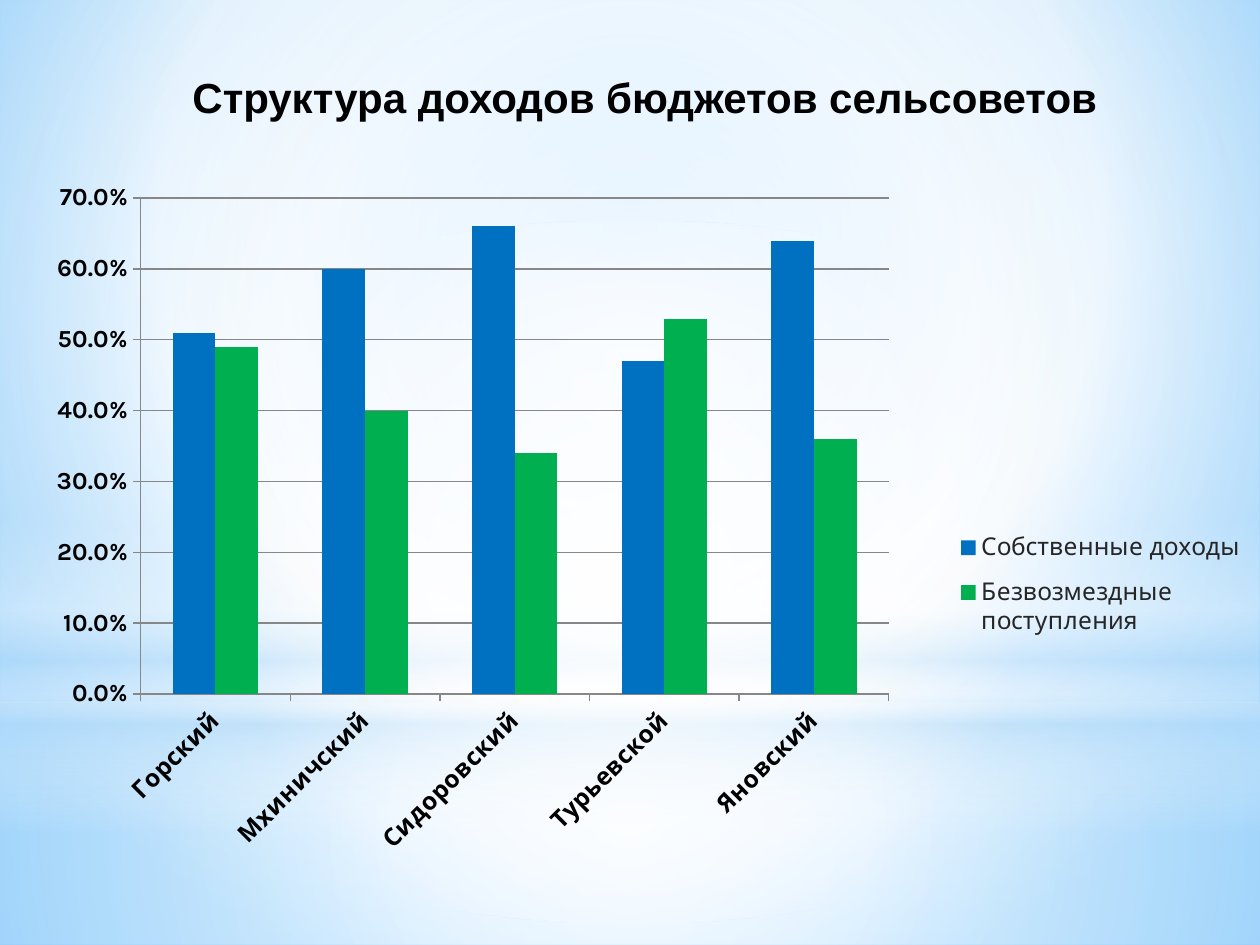
from lxml import etree
from pptx import Presentation
from pptx.chart.data import CategoryChartData
from pptx.dml.color import RGBColor
from pptx.enum.chart import XL_CHART_TYPE, XL_LEGEND_POSITION, XL_TICK_MARK
from pptx.enum.shapes import MSO_SHAPE
from pptx.enum.text import MSO_AUTO_SIZE, PP_ALIGN
from pptx.oxml import parse_xml
from pptx.oxml.ns import qn
from pptx.util import Cm, Pt

COLUMN = XL_CHART_TYPE.COLUMN_CLUSTERED
RIGHT = XL_LEGEND_POSITION.RIGHT
OUT, NONE = XL_TICK_MARK.OUTSIDE, XL_TICK_MARK.NONE
RECT, OVAL = MSO_SHAPE.RECTANGLE, MSO_SHAPE.OVAL
CENTER = PP_ALIGN.CENTER
GROW = MSO_AUTO_SIZE.SHAPE_TO_FIT_TEXT

COLORS = {
    "white": "FFFFFF", "pale": "B4DCFA", "sky": "9ED5FF", "blue": "5BB9FF",
    "black": "000000", "gray": "262626", "line": "878787",
    "own": "0070C0", "grant": "00B050",
}
MID = (50, 50, 50, 50)

# Backdrop layers: shape, box in cm, stops (place, colour, opacity), focus
LAYERS = [
    (RECT, (0, 14.17, 25.4, 4.88),
     [(0, "white", 91), (37, "white", 76), (100, "pale", 79)], MID),
    (RECT, (0, 0, 25.4, 14.17),
     [(0, "white", 89), (48, "white", 62), (100, "pale", 79)], MID),
    (RECT, (0, 10.46, 25.4, 6.35),
     [(0, "white", 0), (29, "white", 30), (45, "pale", 40),
      (55, "white", 26), (65, "pale", 60), (100, "white", 0)], None),
    (OVAL, (0, 4.45, 25.4, 14.17),
     [(0, "white", 100), (56, "white", 0)], MID),
]

CATS = ["Горский", "Мхиничский", "Сидоровский", "Турьевской", "Яновский"]
SERIES = [
    ("Собственные доходы", "own", (0.51, 0.6, 0.66, 0.47, 0.64)),
    ("Безвозмездные поступления", "grant", (0.49, 0.4, 0.34, 0.53, 0.36)),
]


def rgb(name):
    return RGBColor.from_string(COLORS[name])


def set_grad(root, stops, focus):
    """Swap the solid fill under root for a gradient; no focus means downward."""
    ns = "http://schemas.openxmlformats.org/drawingml/2006/main"
    marks = "".join(
        f'<a:gs pos="{pos * 1000}"><a:srgbClr val="{COLORS[name]}">'
        f'<a:alpha val="{alpha * 1000}"/></a:srgbClr></a:gs>'
        for pos, name, alpha in stops)
    if focus:
        sides = " ".join(f'{s}="{v * 1000}"' for s, v in zip("ltrb", focus))
        way = f'<a:path path="circle"><a:fillToRect {sides}/></a:path>'
    else:
        way = '<a:lin ang="5400000" scaled="0"/>'
    solid = root.find(".//" + qn("a:solidFill"))
    solid.getparent().replace(solid, parse_xml(
        f'<a:gradFill xmlns:a="{ns}" rotWithShape="1">'
        f'<a:gsLst>{marks}</a:gsLst>{way}</a:gradFill>'))


def add_layer(slide, kind, box, stops, focus):
    shape = slide.shapes.add_shape(kind, *map(Cm, box))
    shape.shadow.inherit = False
    shape.fill.solid()
    set_grad(shape.element, stops, focus)
    shape.line.fill.background()


def set_font(font, size, color, bold=False, face="Karla"):
    font.name, font.size, font.bold = face, Pt(size), bold
    font.color.rgb = rgb(color)


def add_title(slide, text):
    box = slide.shapes.add_textbox(Cm(1.5), Cm(1.32), Cm(23), Cm(1.27))
    frame = box.text_frame
    frame.word_wrap = True
    frame.auto_size = GROW
    para = frame.paragraphs[0]
    para.alignment = CENTER
    run = para.add_run()
    run.text = text
    set_font(run.font, 24, "black", True, "Arial")


def set_place(root, index, box, inner=False):
    """Give a chart part a fixed place, as shares of the chart."""
    old = root.find(qn("c:layout"))
    if old is not None:
        root.remove(old)
    layout = etree.Element(qn("c:layout"))
    manual = etree.SubElement(layout, qn("c:manualLayout"))
    pairs = [("layoutTarget", "inner")] if inner else []
    pairs += [("xMode", "edge"), ("yMode", "edge")]
    pairs += zip("xywh", box)
    for tag, val in pairs:
        etree.SubElement(manual, qn("c:" + tag)).set("val", str(val))
    root.insert(index, layout)


def style_axis(axis):
    axis.major_tick_mark, axis.minor_tick_mark = OUT, NONE
    set_font(axis.tick_labels.font, 14, "black", True)
    axis.format.line.color.rgb = rgb("line")
    axis.format.line.width = Pt(0.75)


def add_bars(slide):
    data = CategoryChartData(number_format="0.0%")
    data.categories = CATS
    for name, _, vals in SERIES:
        data.add_series(name, vals)
    box = map(Cm, (0.71, 3.53, 24.69, 15.01))
    chart = slide.shapes.add_chart(COLUMN, *box, data).chart
    chart.has_title = False
    set_font(chart.font, 10, "black")

    # Bars
    plot = chart.plots[0]
    plot.gap_width, plot.overlap, plot.vary_by_categories = 150, 0, False
    for series, (_, color, _) in zip(plot.series, SERIES):
        series.format.fill.solid()
        series.format.fill.fore_color.rgb = rgb(color)
    area = chart.element.find(".//" + qn("c:plotArea"))
    set_place(area, 0, (0.086, 0.031, 0.611, 0.666), True)

    # Axes
    cat, val = chart.category_axis, chart.value_axis
    style_axis(cat)
    style_axis(val)
    turn = cat.tick_labels.font and cat._element.find(".//" + qn("a:bodyPr"))
    turn.set("rot", "-2700000")
    turn.set("vert", "horz")
    val.minimum_scale, val.maximum_scale, val.major_unit = 0, 0.7, 0.1
    val.tick_labels.number_format = "0.0%"
    val.tick_labels.number_format_is_linked = False
    val.has_major_gridlines = True
    grid = val.major_gridlines.format.line
    grid.color.rgb, grid.width = rgb("line"), Pt(0.75)

    # Legend
    chart.has_legend = True
    legend = chart.legend
    legend.position, legend.include_in_layout = RIGHT, False
    set_font(legend.font, 14, "gray")
    set_place(chart.element.find(".//" + qn("c:legend")), 1,
              (0.74, 0.46, 0.26, 0.18))


def main():
    deck = Presentation()
    deck.slide_width, deck.slide_height = Cm(25.4), Cm(19.05)
    slide = deck.slides.add_slide(deck.slide_layouts[6])

    # Backdrop
    slide.background.fill.solid()
    slide.background.fill.fore_color.rgb = rgb("white")
    set_grad(slide.element,
             [(0, "sky", 100), (60, "white", 100), (100, "blue", 100)],
             (20, 10, 20, 60))
    for layer in LAYERS:
        add_layer(slide, *layer)

    # Content
    add_title(slide, "Структура доходов бюджетов сельсоветов")
    add_bars(slide)
    deck.save("out.pptx")


if __name__ == "__main__":
    main()
